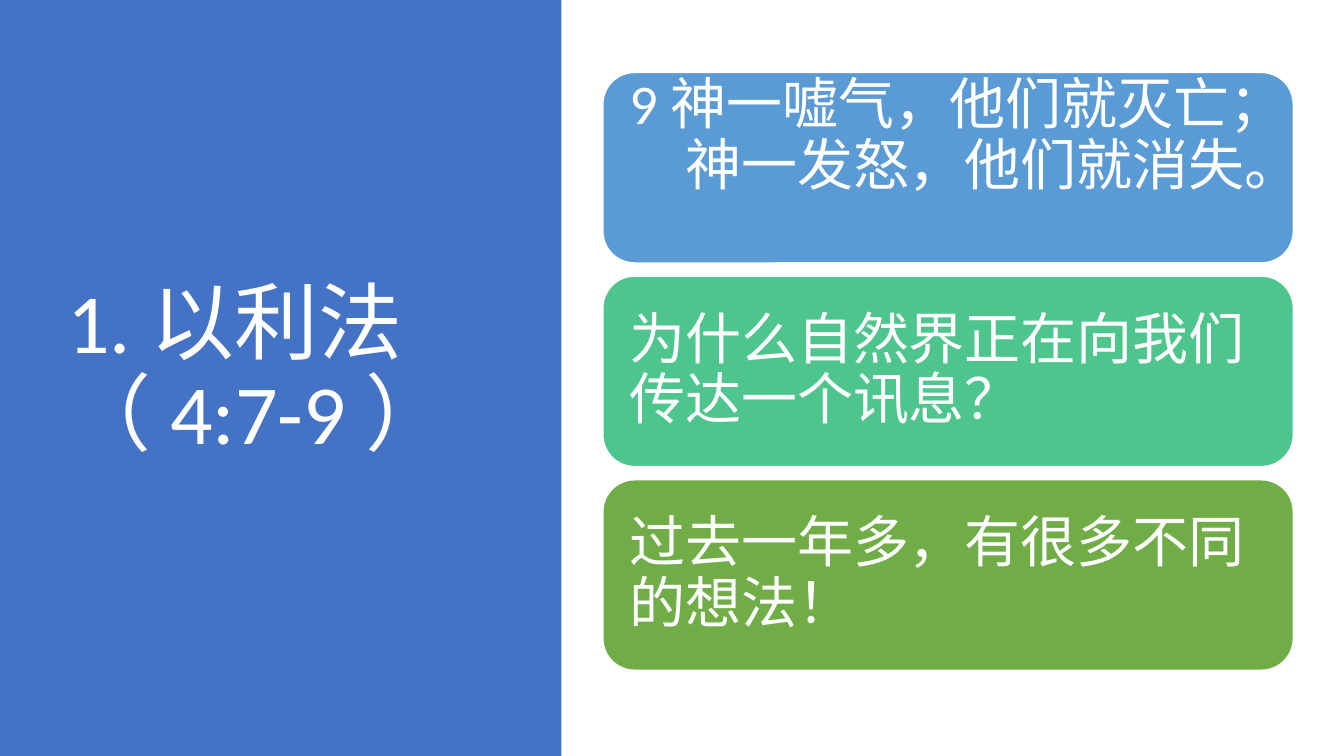
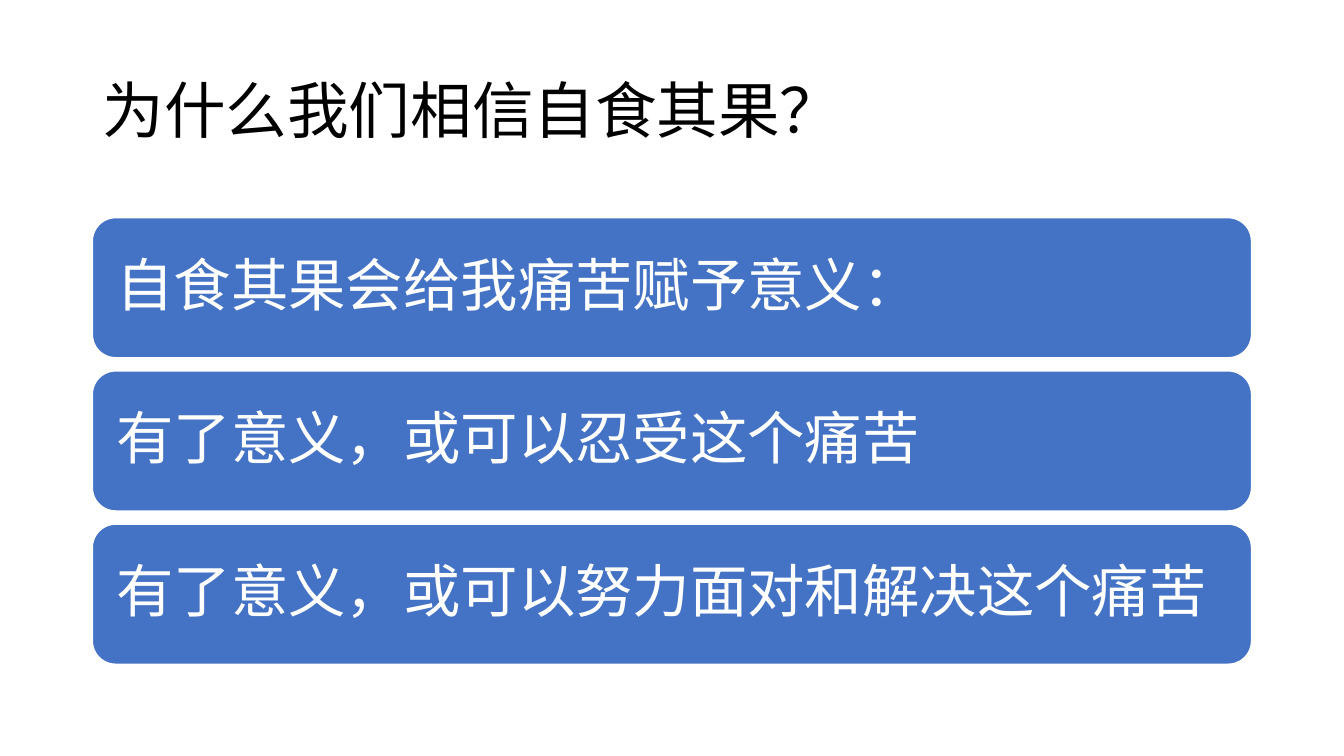
from pptx import Presentation
from pptx.dml.color import RGBColor
from pptx.enum import shapes, text
from pptx.util import Pt

WHITE = RGBColor(0xFF, 0xFF, 0xFF)
BLACK = RGBColor(0, 0, 0)
BLUE = RGBColor(0x44, 0x72, 0xC4)
SKY = RGBColor(0x5B, 0x9B, 0xD5)
MINT = RGBColor(0x4D, 0xC5, 0x8D)
GREEN = RGBColor(0x70, 0xAD, 0x47)
FONT = "Calibri"
WIDE, HIGH = 960, 540
GAP = 9.4
PAD = 12.24


def write(frame, words, size, color):
    """Write left-aligned, middle-anchored words, one paragraph for each line."""
    frame.word_wrap = True
    frame.auto_size = text.MSO_AUTO_SIZE.NONE
    frame.vertical_anchor = text.MSO_ANCHOR.MIDDLE
    for i, line in enumerate(words.split("\n")):
        para = frame.add_paragraph() if i else frame.paragraphs[0]
        para.alignment = text.PP_ALIGN.LEFT
        para.line_spacing = 0.9
        para.space_before = para.space_after = Pt(0)
        run = para.add_run()
        run.text = line
        run.font.name = FONT
        run.font.size = Pt(size)
        run.font.color.rgb = color


def block(slide, kind, box, fill):
    """Add a plain filled shape in the box."""
    shape = slide.shapes.add_shape(kind, *map(Pt, box))
    shape.shadow.inherit = False
    shape.fill.solid()
    shape.fill.fore_color.rgb = fill
    shape.line.fill.background()
    return shape


def head(slide, box, words, size, color):
    """Place the title in the box."""
    title = slide.shapes.title
    title.left, title.top, title.width, title.height = map(Pt, box)
    write(title.text_frame, words, size, color)


def panel(slide, box):
    """Add a blue panel behind the title."""
    shape = block(slide, shapes.MSO_SHAPE.RECTANGLE, box, BLUE)
    slide.shapes.title.element.addprevious(shape.element)


def stack(slide, box, cards, size):
    """Fill the box with equal rounded cards of words, fill and extra foot room."""
    left, top, width, height = box
    tall = (height - GAP * (len(cards) - 1)) / len(cards)
    for i, (words, fill, foot) in enumerate(cards):
        spot = (left, top + i * (tall + GAP), width, tall)
        card = block(slide, shapes.MSO_SHAPE.ROUNDED_RECTANGLE, spot, fill)
        card.line.color.rgb = WHITE
        card.line.width = Pt(1)
        frame = card.text_frame
        frame.margin_left = frame.margin_right = frame.margin_top = Pt(PAD)
        frame.margin_bottom = Pt(PAD + foot)
        write(frame, words, size, WHITE)


def verse(slide):
    """Build the slide with a side panel and three coloured cards."""
    panel(slide, (0, 0, 401, HIGH))
    head(slide, (41, 49, 299.5, 433.5), "1. 以利法 （ 4:7-9 ）", 60, WHITE)
    stack(slide, (430.6, 51.8, 493.2, 427), [
        ("9 神一嘘气，他们就灭亡；\n　神一发怒，他们就消失。", SKY, 44),
        ("为什么自然界正在向我们传达一个讯息？", MINT, 0),
        ("过去一年多，有很多不同的想法！", GREEN, 0),
    ], 40)


def reason(slide):
    """Build the slide with a top title and three blue cards."""
    head(slide, (66, 28.8, 828, 104.4), "为什么我们相信自食其果？", 44, BLACK)
    lines = ["自食其果会给我痛苦赋予意义：",
             "有了意义，或可以忍受这个痛苦",
             "有了意义，或可以努力面对和解决这个痛苦"]
    stack(slide, (66, 155.5, 828, 319), [(line, BLUE, 0) for line in lines], 41)


def main():
    """Build and save the deck."""
    deck = Presentation()
    deck.slide_width, deck.slide_height = Pt(WIDE), Pt(HIGH)
    for build in (verse, reason):
        build(deck.slides.add_slide(deck.slide_layouts[5]))
    deck.save("out.pptx")


if __name__ == "__main__":
    main()
